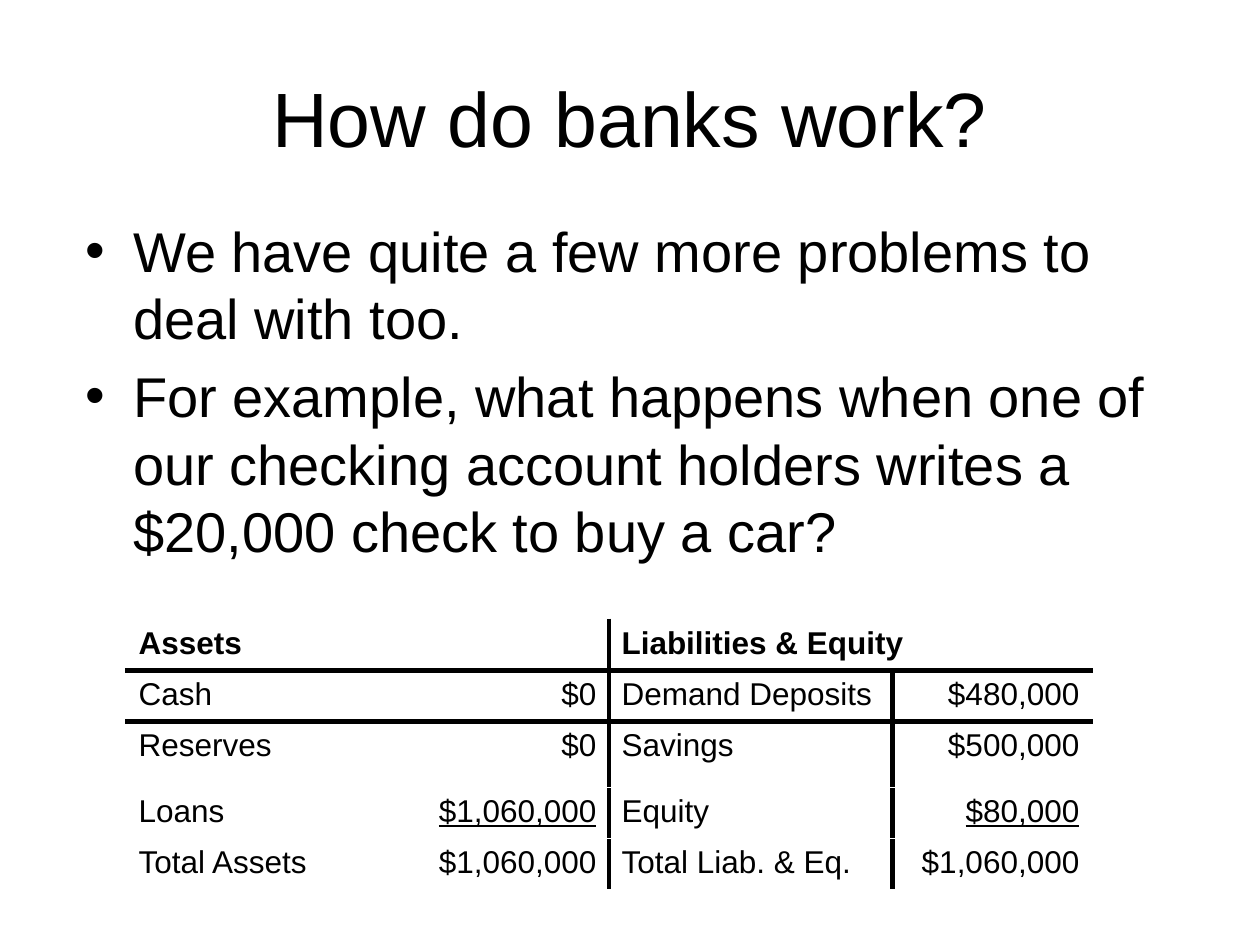
"""Build the bank balance sheet slide."""
from lxml import etree
from pptx import Presentation
from pptx.dml.color import RGBColor
from pptx.enum import text
from pptx.oxml import ns
from pptx.util import Pt

BLACK, WHITE = "000000", "FFFFFF"
TITLE = "How do banks work?"
BULLETS = [
    "We have quite a few more problems to deal with too.",
    "For example, what happens when one of our checking account holders "
    "writes a $20,000 check to buy a car?",
]
ROWS = [
    ("Assets", "", "Liabilities & Equity", ""),
    ("Cash", "$0", "Demand Deposits", "$480,000"),
    ("Reserves", "$0", "Savings", "$500,000"),
    ("Loans", "$1,060,000", "Equity", "$80,000"),
    ("Total Assets", "$1,060,000", "Total Liab. & Eq.", "$1,060,000"),
]
COL_WIDTHS = [138, 138, 162, 114]
ROW_HEIGHTS = [29.2, 29.2, 37.6, 29.2, 29.2]
HEADER, ADDEND = 0, 3
RULED_ROWS = (0, 1)


def rgb(color):
    return RGBColor.from_string(color)


def style(p, size, align=text.PP_ALIGN.LEFT, bold=False, underline=False):
    p.alignment = align
    for r in p.runs:
        r.font.name, r.font.size = "Arial", Pt(size)
        r.font.bold, r.font.underline = bold, underline
        r.font.color.rgb = rgb(BLACK)


def add_text(s, box, paragraphs, anchor):
    tf = s.shapes.add_textbox(*map(Pt, box)).text_frame
    tf.word_wrap, tf.vertical_anchor = True, anchor
    tf.text = "\n".join(paragraphs)
    return tf.paragraphs


def add_bullet(p, indent):
    pPr = p._p.get_or_add_pPr()
    pPr.set("marL", str(Pt(indent)))
    pPr.set("indent", str(-Pt(indent)))
    etree.SubElement(pPr, ns.qn("a:buFont"), typeface="Arial")
    etree.SubElement(pPr, ns.qn("a:buChar"), char="•")


def add_border(cell, side, ruled):
    width, color = (3, BLACK) if ruled else (1, WHITE)
    ln = etree.SubElement(cell._tc.get_or_add_tcPr(), ns.qn(f"a:ln{side}"), w=str(Pt(width)))
    fill = etree.SubElement(ln, ns.qn("a:solidFill"))
    etree.SubElement(fill, ns.qn("a:srgbClr"), val=color)


def ruled_after(row, col):
    return col == 1 or (col == 2 and row != HEADER)


def add_balance_sheet(s, left, top):
    frame = s.shapes.add_table(len(ROWS), len(COL_WIDTHS), Pt(left), Pt(top),
                               Pt(sum(COL_WIDTHS)), Pt(sum(ROW_HEIGHTS)))
    table = frame.table
    table.first_row = table.horz_banding = False
    for column, width in zip(table.columns, COL_WIDTHS):
        column.width = Pt(width)
    for row, height in zip(table.rows, ROW_HEIGHTS):
        row.height = Pt(height)
    table.cell(HEADER, 2).merge(table.cell(HEADER, 3))
    for i, row in enumerate(ROWS):
        for j, value in enumerate(row):
            cell = table.cell(i, j)
            is_amount = j % 2 == 1
            if value:
                cell.text_frame.text = value
            style(cell.text_frame.paragraphs[0], 18,
                  text.PP_ALIGN.RIGHT if is_amount else text.PP_ALIGN.LEFT,
                  i == HEADER, is_amount and i == ADDEND)
            add_border(cell, "L", ruled_after(i, j - 1))
            add_border(cell, "R", ruled_after(i, j))
            add_border(cell, "T", i - 1 in RULED_ROWS)
            add_border(cell, "B", i in RULED_ROWS)
            cell.fill.solid()
            cell.fill.fore_color.rgb = rgb(WHITE)


def main():
    prs = Presentation()
    prs.slide_width, prs.slide_height = Pt(720), Pt(540)
    s = prs.slides.add_slide(prs.slide_layouts[6])
    for p in add_text(s, (36, 21.6, 648, 90), [TITLE], text.MSO_ANCHOR.MIDDLE):
        style(p, 44, text.PP_ALIGN.CENTER)
    for p in add_text(s, (42, 120, 648, 356.4), BULLETS, text.MSO_ANCHOR.TOP):
        style(p, 32)
        p.space_before = Pt(6.4)
        add_bullet(p, 27)
    add_balance_sheet(s, 72, 354)
    prs.save("out.pptx")


if __name__ == "__main__":
    main()
